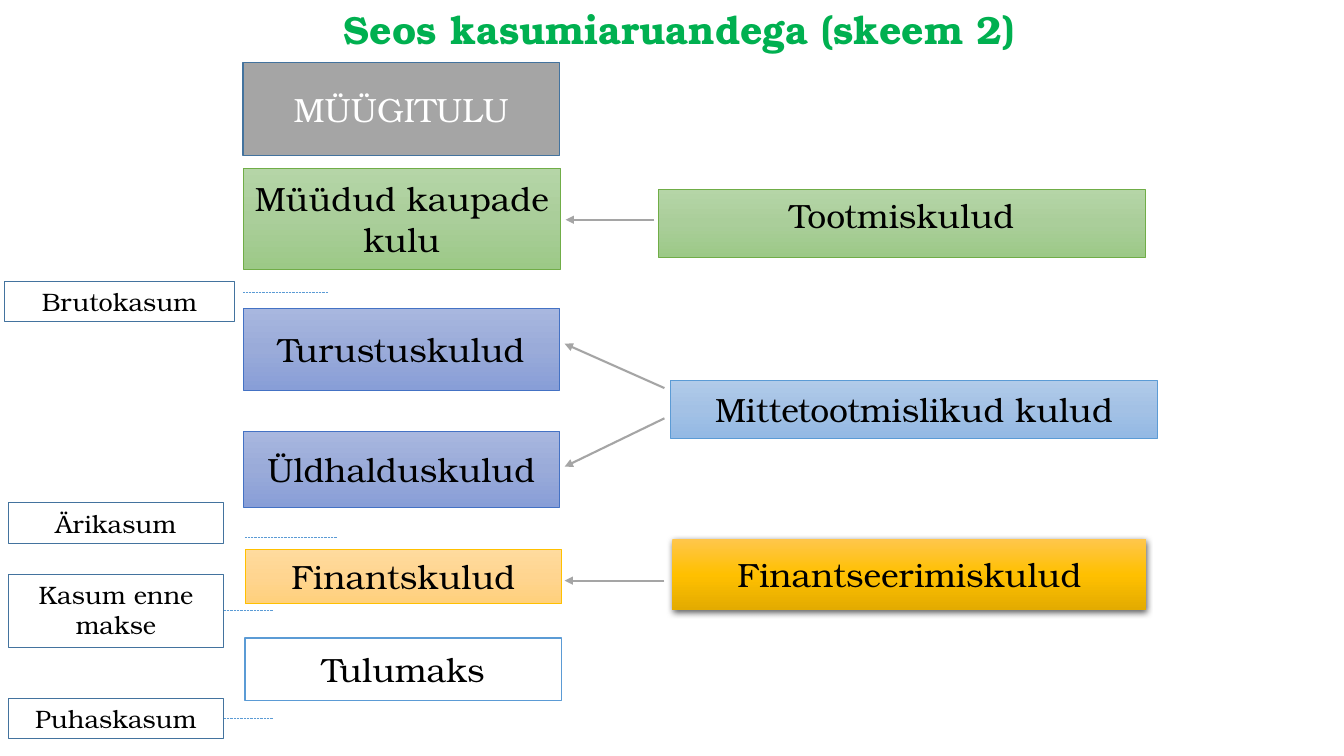
from copy import deepcopy

from lxml.etree import SubElement
from pptx import Presentation
from pptx.dml.color import RGBColor
from pptx.enum.dml import MSO_LINE
from pptx.enum.shapes import MSO_CONNECTOR, MSO_SHAPE
from pptx.enum.text import MSO_ANCHOR as ANCHOR, MSO_AUTO_SIZE, PP_ALIGN
from pptx.oxml.ns import qn
from pptx.util import Pt

PX = 9144  # 100 px to the inch
FONT = "TeX Gyre Bonum"

BLACK = RGBColor(0x00, 0x00, 0x00)
WHITE = RGBColor(0xFF, 0xFF, 0xFF)
GRAY = RGBColor(0xA5, 0xA5, 0xA5)
TITLE_GREEN = RGBColor(0x00, 0xB0, 0x50)
DARK_BLUE = RGBColor(0x43, 0x73, 0x9E)
SKY = RGBColor(0x5B, 0x9B, 0xD5)
GREEN = RGBColor(0x70, 0xAD, 0x47)
BLUE = RGBColor(0x44, 0x72, 0xC4)
GOLD = RGBColor(0xFF, 0xC0, 0x00)
GREEN_FADE = [RGBColor(0xB5, 0xD5, 0xA7), RGBColor(0xAA, 0xCE, 0x9A), RGBColor(0x9C, 0xC9, 0x87)]
BLUE_FADE = [RGBColor(0xA8, 0xB7, 0xDF), RGBColor(0x9A, 0xAB, 0xD9), RGBColor(0x88, 0x9E, 0xD7)]
SKY_FADE = [RGBColor(0xB1, 0xCB, 0xE9), RGBColor(0xA3, 0xC1, 0xE5), RGBColor(0x93, 0xB9, 0xE4)]
PEACH_FADE = [RGBColor(0xFF, 0xDB, 0x9E), RGBColor(0xFF, 0xD5, 0x90), RGBColor(0xFF, 0xD0, 0x7C)]
GOLD_FADE = [RGBColor(0xFF, 0xC6, 0x4B), GOLD, RGBColor(0xE3, 0xAB, 0x00)]

deck = Presentation()
deck.slide_width, deck.slide_height = 1333 * PX, 750 * PX
page = deck.slides.add_slide(deck.slide_layouts[5])


def add_box(text, left, top, width, height, fill=None, fade=None, line=None,
            weight=0.5, size=24, color=BLACK, anchor=ANCHOR.MIDDLE, after=0):
    box = page.shapes.add_shape(
        MSO_SHAPE.RECTANGLE, left * PX, top * PX, width * PX, height * PX)
    box.shadow.inherit = False
    if fade:
        box.fill.gradient()
        box.fill.gradient_angle = 270
        stop_list = box._element.spPr.find(".//" + qn("a:gsLst"))
        stop_list.insert(1, deepcopy(stop_list[0]))
        for index, stop in enumerate(box.fill.gradient_stops):
            stop.position = index / 2
            stop.color.rgb = fade[index]
    elif fill is not None:
        box.fill.solid()
        box.fill.fore_color.rgb = fill
    else:
        box.fill.background()
    if line is None:
        box.line.fill.background()
    else:
        box.line.color.rgb = line
        box.line.width = Pt(weight)
    frame = box.text_frame
    frame.word_wrap = True
    frame.vertical_anchor = anchor
    para = frame.paragraphs[0]
    para.alignment = PP_ALIGN.CENTER
    para.space_after = Pt(after)
    span = para.add_run()
    span.text = text
    span.font.name = FONT
    span.font.size = Pt(size)
    span.font.color.rgb = color
    return box


def add_line(start_x, start_y, end_x, end_y, color, weight):
    line = page.shapes.add_connector(
        MSO_CONNECTOR.STRAIGHT, start_x * PX, start_y * PX, end_x * PX, end_y * PX)
    line.line.color.rgb = color
    line.line.width = Pt(weight)
    SubElement(line._element.spPr, qn("a:effectLst"))
    return line


# Title
title = page.shapes.title
title.left, title.top, title.width, title.height = 327 * PX, 0, 694 * PX, 57 * PX
title.text_frame.text = "Seos kasumiaruandega (skeem 2)"
title.text_frame.word_wrap = False
title.text_frame.auto_size = MSO_AUTO_SIZE.NONE
title.text_frame.vertical_anchor = ANCHOR.TOP
title_para = title.text_frame.paragraphs[0]
title_para.alignment = PP_ALIGN.CENTER
title_para.font.name = FONT
title_para.font.size = Pt(28)
title_para.font.bold = True
title_para.font.color.rgb = TITLE_GREEN

# Income statement lines
add_box("MÜÜGITULU", 241, 62, 314, 92, fill=GRAY, line=DARK_BLUE, weight=1, color=WHITE)
add_box("Müüdud kaupade kulu", 241, 167, 315, 100, fade=GREEN_FADE, line=GREEN)
add_box("Turustuskulud", 241, 306, 314, 81, fade=BLUE_FADE, line=BLUE)
add_box("Üldhalduskulud", 241, 428, 314, 75, fade=BLUE_FADE, line=BLUE)
add_box("Finantskulud", 243, 545, 314, 54, fade=PEACH_FADE, line=GOLD)
add_box("Tulumaks", 243, 633, 314, 62, fill=WHITE, line=SKY, weight=1)

# Cost groups
add_box("Tootmiskulud", 653, 188, 483, 67, fade=GREEN_FADE, line=GREEN,
        anchor=ANCHOR.TOP, after=10)
add_box("Mittetootmislikud kulud", 665, 377, 483, 58, fade=SKY_FADE, line=SKY, after=10)
financing = add_box("Finantseerimiskulud", 667, 535, 470, 70, fade=GOLD_FADE, after=10)
effects = financing._element.spPr.find(qn("a:effectLst"))
shadow = SubElement(effects, qn("a:outerShdw"), blurRad="57150", dist="19050",
                    dir="5400000", algn="ctr", rotWithShape="0")
shadow_color = SubElement(shadow, qn("a:srgbClr"), val="000000")
SubElement(shadow_color, qn("a:alpha"), val="63000")

# Profit levels, each with its dotted line
for text, left, top, width, height, start, end, joined in [
    ("Brutokasum", 4, 279, 229, 40, (241, 290), (325, 290), False),
    ("Ärikasum", 8, 499, 214, 40, (243, 533), (335, 533), False),
    ("Kasum enne makse", 8, 570, 214, 72, (222, 606), (271, 606), True),
    ("Puhaskasum", 8, 693, 214, 40, (222, 713), (271, 713), True),
]:
    level = add_box(text, left, top, width, height, line=DARK_BLUE, weight=0.75,
                    size=18, anchor=ANCHOR.TOP)
    dotted = add_line(*start, *end, SKY, 0.5)
    dotted.line.dash_style = MSO_LINE.ROUND_DOT
    if joined:
        dotted.begin_connect(level, 3)

# Arrows from cost groups to statement lines
for ends in [(649, 218, 561, 218), (659, 385, 560, 341),
             (659, 415, 560, 463), (659, 576, 560, 576)]:
    arrow = add_line(*ends, GRAY, 1.5)
    SubElement(arrow.line._get_or_add_ln(), qn("a:tailEnd"), type="triangle")

deck.save("out.pptx")
